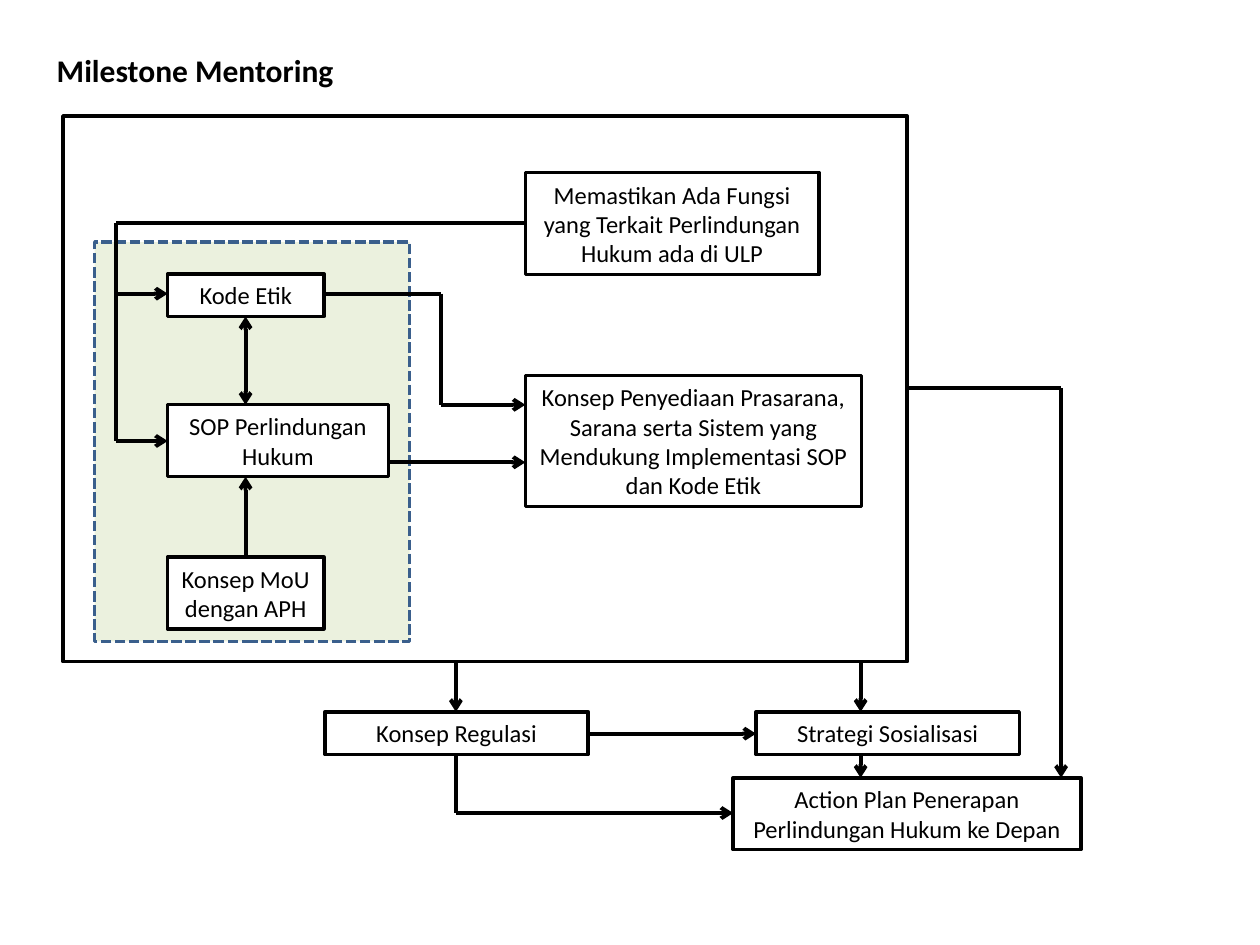
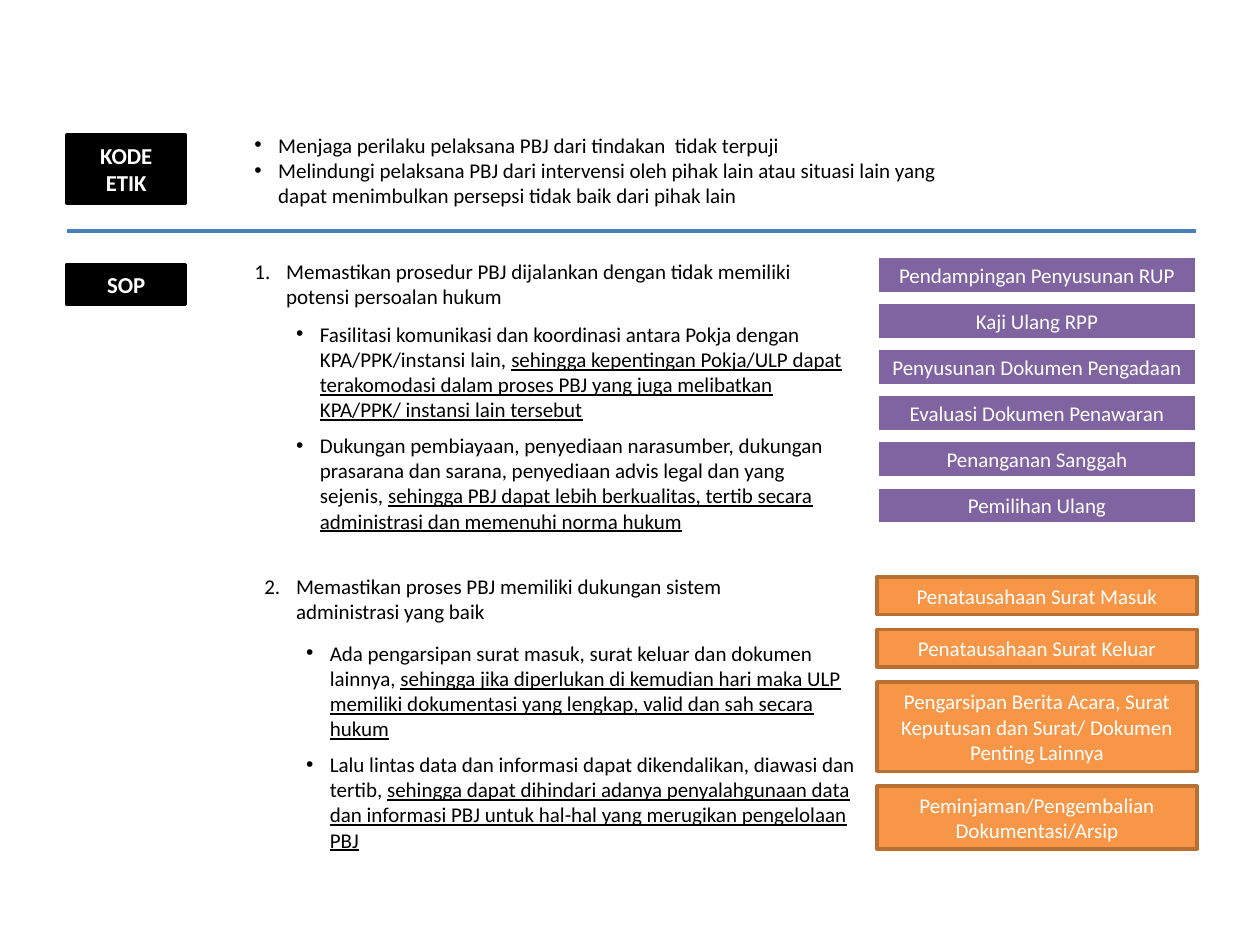
from lxml import etree
from pptx import Presentation
from pptx.dml.color import RGBColor
from pptx.enum.dml import MSO_LINE
from pptx.enum.shapes import MSO_CONNECTOR, MSO_SHAPE
from pptx.enum.text import MSO_ANCHOR, PP_ALIGN
from pptx.oxml.ns import qn
from pptx.util import Cm, Pt

RECTANGLE = MSO_SHAPE.RECTANGLE
STRAIGHT = MSO_CONNECTOR.STRAIGHT
SHORT_DASH = MSO_LINE.SQUARE_DOT
MIDDLE, TOP = MSO_ANCHOR.MIDDLE, MSO_ANCHOR.TOP
CENTER, LEFT = PP_ALIGN.CENTER, PP_ALIGN.LEFT

BLACK = RGBColor(0x00, 0x00, 0x00)
WHITE = RGBColor(0xFF, 0xFF, 0xFF)
PALE_GREEN = RGBColor(0xEB, 0xF1, 0xDE)
DASH_BLUE = RGBColor(0x3A, 0x5F, 0x8C)
RULE_BLUE = RGBColor(0x4B, 0x7E, 0xBC)
PURPLE = RGBColor(0x80, 0x64, 0xA2)
ORANGE = RGBColor(0xF7, 0x96, 0x46)
BROWN = RGBColor(0xB7, 0x6F, 0x34)

# Font formats
TITLE_FONT = {"name": "Calibri", "size": Pt(18), "bold": True}
NODE_FONT = {"name": "Calibri", "size": Pt(14)}
LABEL_FONT = {"name": "Calibri", "size": Pt(13), "bold": True}
BODY_FONT = {"name": "Calibri", "size": Pt(12)}
UNDERLINED_FONT = {**BODY_FONT, "underline": True}

# Box formats
NODE_BOX = {"fill": WHITE, "line": BLACK, "font": NODE_FONT, "color": BLACK}
LABEL_BOX = {"fill": BLACK, "line": BLACK, "font": LABEL_FONT, "color": WHITE}
PURPLE_BOX = {"fill": PURPLE, "line": WHITE, "line_width": 2.25,
              "font": BODY_FONT, "color": WHITE}
ORANGE_BOX = {"fill": ORANGE, "line": BROWN, "font": BODY_FONT, "color": WHITE}
FRAME_BOX = {"fill": None, "line": BLACK}
ZONE_BOX = {"fill": PALE_GREEN, "line": DASH_BLUE, "dash": SHORT_DASH}

# Diagram parts in cm, measured from the corner of the frame
FRAME_SIZE = (17.02, 11)
ZONE = (0.64, 2.54, 6.35, 8.05)
NODES = [
    ("Memastikan Ada Fungsi yang Terkait Perlindungan Hukum ada di ULP",
     (9.32, 1.14, 5.92, 2.06)),
    ("Kode Etik", (2.11, 3.18, 3.15, 0.86)),
    ("Konsep MoU dengan APH", (2.11, 8.89, 3.15, 1.45)),
    ("SOP Perlindungan Hukum", (2.11, 5.82, 4.45, 1.45)),
    ("Konsep Penyediaan Prasarana, Sarana serta Sistem yang Mendukung "
     "Implementasi SOP dan Kode Etik", (9.32, 5.23, 6.78, 2.64)),
    ("Strategi Sosialisasi", (13.97, 12.01, 5.31, 0.86)),
    ("Konsep Regulasi", (5.28, 12.01, 5.31, 0.86)),
    ("Action Plan Penerapan Perlindungan Hukum ke Depan",
     (13.51, 13.34, 7.01, 1.45)),
]
TWO_WAY_ROUTE = [(3.68, 5.82), (3.68, 4.04)]
ROUTES = [
    [(3.68, 8.89), (3.68, 7.27)],
    [(9.32, 2.16), (1.07, 2.16), (1.07, 6.55), (2.11, 6.55)],
    [(1.07, 3.58), (2.11, 3.58)],
    [(6.56, 6.98), (9.32, 6.98)],
    [(5.26, 3.58), (7.62, 3.58), (7.62, 5.82), (9.32, 5.82)],
    [(7.92, 11), (7.92, 12.01)],
    [(16.08, 11), (16.08, 12.01)],
    [(10.59, 12.45), (13.97, 12.45)],
    [(7.92, 12.87), (7.92, 14.05), (13.51, 14.05)],
    [(17.02, 5.49), (20.12, 5.49), (20.12, 13.34)],
    [(16.08, 12.87), (16.08, 13.34)],
]

CODE_POINTS = [
    ["Menjaga perilaku pelaksana PBJ dari tindakan  tidak terpuji"],
    ["Melindungi pelaksana PBJ dari intervensi oleh pihak lain atau situasi "
     "lain yang dapat menimbulkan persepsi tidak baik dari pihak lain"],
]

# Topics of the SOP: places in cm from the corner of the section,
# each point is a plain part and an underlined part
TOPICS = [
    {
        "heading": "Memastikan prosedur PBJ dijalankan dengan tidak memiliki "
                   "potensi persoalan hukum",
        "heading_box": (3.53, 0, 11.43, 1.27),
        "points_box": (4.37, 1.27, 11.63, 4.57),
        "points": [
            ["Fasilitasi komunikasi dan koordinasi antara Pokja dengan "
             "KPA/PPK/instansi lain, ",
             "sehingga kepentingan Pokja/ULP dapat terakomodasi dalam proses "
             "PBJ yang juga melibatkan KPA/PPK/ instansi lain tersebut"],
            ["Dukungan pembiayaan, penyediaan narasumber, dukungan prasarana "
             "dan sarana, penyediaan advis legal dan yang sejenis, ",
             "sehingga PBJ dapat lebih berkualitas, tertib secara "
             "administrasi dan memenuhi norma hukum"],
        ],
        "stack_top": 0.08,
        "stack_gap": 0.17,
        "stack_format": PURPLE_BOX,
        "steps": [
            ("Pendampingan Penyusunan RUP", 0.76),
            ("Kaji Ulang RPP", 0.76),
            ("Penyusunan Dokumen Pengadaan", 0.76),
            ("Evaluasi Dokumen Penawaran", 0.76),
            ("Penanganan Sanggah", 0.76),
            ("Pemilihan Ulang", 0.76),
        ],
    },
    {
        "heading": "Memastikan proses PBJ memiliki dukungan sistem "
                   "administrasi yang baik",
        "heading_box": (3.73, 6.35, 10.8, 1.27),
        "points_box": (4.57, 7.7, 11.63, 4.57),
        "points": [
            ["Ada pengarsipan surat masuk, surat keluar dan dokumen lainnya, ",
             "sehingga jika diperlukan di kemudian hari maka ULP memiliki "
             "dokumentasi yang lengkap, valid dan sah secara hukum"],
            ["Lalu lintas data dan informasi dapat dikendalikan, diawasi dan "
             "tertib, ",
             "sehingga dapat dihindari adanya penyalahgunaan data dan "
             "informasi PBJ untuk hal-hal yang merugikan pengelolaan PBJ"],
        ],
        "stack_top": 6.55,
        "stack_gap": 0.3,
        "stack_format": ORANGE_BOX,
        "steps": [
            ("Penatausahaan Surat Masuk", 0.76),
            ("Penatausahaan Surat Keluar", 0.76),
            ("Pengarsipan Berita Acara, Surat Keputusan dan Surat/ Dokumen "
             "Penting Lainnya", 1.8),
            ("Peminjaman/Pengembalian Dokumentasi/Arsip", 1.27),
        ],
    },
]
STACK_LEFT, STACK_WIDTH = 16.33, 6.45


def to_cm(values):
    return [Cm(value) for value in values]


def shift(part, corner):
    """Move a part by the corner of the region that holds it."""
    return (part[0] + corner[0], part[1] + corner[1], *part[2:])


def add_run(paragraph, text, font_format, color):
    run = paragraph.add_run()
    run.text = text
    for name, value in font_format.items():
        setattr(run.font, name, value)
    run.font.color.rgb = color


def add_box(slide, box, box_format, text=None):
    shape = slide.shapes.add_shape(RECTANGLE, *to_cm(box))
    shape.shadow.inherit = False
    if box_format["fill"] is None:
        shape.fill.background()
    else:
        shape.fill.solid()
        shape.fill.fore_color.rgb = box_format["fill"]
    shape.line.color.rgb = box_format["line"]
    shape.line.width = Pt(box_format.get("line_width", 2))
    if "dash" in box_format:
        shape.line.dash_style = box_format["dash"]
    if text:
        frame = shape.text_frame
        frame.word_wrap = True
        frame.vertical_anchor = MIDDLE
        frame.paragraphs[0].alignment = CENTER
        add_run(frame.paragraphs[0], text, box_format["font"], box_format["color"])


def add_line(slide, start, end, color=BLACK, arrows=()):
    connector = slide.shapes.add_connector(STRAIGHT, *to_cm((*start, *end)))
    connector.line.color.rgb = color
    connector.line.width = Pt(2.25)
    line = connector.line._get_or_add_ln()
    for arrow in arrows:
        etree.SubElement(line, qn(arrow), type="arrow")
    etree.SubElement(connector._element.spPr, qn("a:effectLst"))


def add_route(slide, corner, points):
    """Join the points with lines; the last one carries the arrowhead."""
    points = [shift(point, corner) for point in points]
    last = len(points) - 2
    for index, (start, end) in enumerate(zip(points, points[1:])):
        add_line(slide, start, end, arrows=["a:tailEnd"] if index == last else ())


def add_list(slide, box, items, indent=0.48, number=None, space_after=0):
    frame = slide.shapes.add_textbox(*to_cm(box)).text_frame
    frame.word_wrap = True
    frame.vertical_anchor = TOP
    for index, parts in enumerate(items):
        paragraph = frame.add_paragraph() if index else frame.paragraphs[0]
        properties = paragraph._p.get_or_add_pPr()
        properties.set("marL", str(Cm(indent)))
        properties.set("indent", str(-Cm(indent)))
        if number:
            etree.SubElement(properties, qn("a:buAutoNum"),
                             type="arabicPeriod", startAt=str(number))
        else:
            etree.SubElement(properties, qn("a:buFont"), typeface="Arial")
            etree.SubElement(properties, qn("a:buChar"), char="•")
        paragraph.space_after = Pt(space_after)
        for text, font_format in zip(parts, (BODY_FONT, UNDERLINED_FONT)):
            add_run(paragraph, text, font_format, BLACK)


def set_title(slide, box, text):
    title = slide.shapes.title
    title.left, title.top, title.width, title.height = to_cm(box)
    title.text_frame.vertical_anchor = MIDDLE
    paragraph = title.text_frame.paragraphs[0]
    paragraph.alignment = LEFT
    add_run(paragraph, text, TITLE_FONT, BLACK)


def draw_milestones(slide, corner):
    add_box(slide, shift(ZONE, corner), ZONE_BOX)
    for text, box in NODES:
        add_box(slide, shift(box, corner), NODE_BOX, text)
    add_box(slide, (*corner, *FRAME_SIZE), FRAME_BOX)
    start, end = (shift(point, corner) for point in TWO_WAY_ROUTE)
    add_line(slide, start, end, arrows=["a:headEnd", "a:tailEnd"])
    for points in ROUTES:
        add_route(slide, corner, points)


def draw_code_section(slide, corner):
    add_box(slide, shift((0, 0.18, 2.39, 1.37), corner), LABEL_BOX, "KODE ETIK")
    add_list(slide, shift((3.53, 0, 14.6, 1.8), corner), CODE_POINTS)


def draw_sop_section(slide, corner):
    add_box(slide, shift((0, 0.25, 2.39, 0.81), corner), LABEL_BOX, "SOP")
    for number, topic in enumerate(TOPICS, start=1):
        add_list(slide, shift(topic["heading_box"], corner),
                 [[topic["heading"]]], indent=0.64, number=number)
        add_list(slide, shift(topic["points_box"], corner),
                 topic["points"], space_after=6)
        top = topic["stack_top"]
        for text, height in topic["steps"]:
            box = (STACK_LEFT, top, STACK_WIDTH, height)
            add_box(slide, shift(box, corner), topic["stack_format"], text)
            top += height + topic["stack_gap"]


def main():
    presentation = Presentation()
    presentation.slide_width, presentation.slide_height = Cm(25.4), Cm(19.05)
    title_only, blank = presentation.slide_layouts[5], presentation.slide_layouts[6]

    # Milestone diagram
    slide = presentation.slides.add_slide(title_only)
    set_title(slide, (0.89, 0.84, 22.5, 1.14), "Milestone Mentoring")
    draw_milestones(slide, (1.27, 2.34))

    # Code of ethics and procedures
    slide = presentation.slides.add_slide(blank)
    draw_code_section(slide, (1.35, 2.54))
    draw_sop_section(slide, (1.35, 5.08))
    add_line(slide, (1.35, 4.65), (24.1, 4.65), RULE_BLUE)

    presentation.save("out.pptx")


if __name__ == "__main__":
    main()
